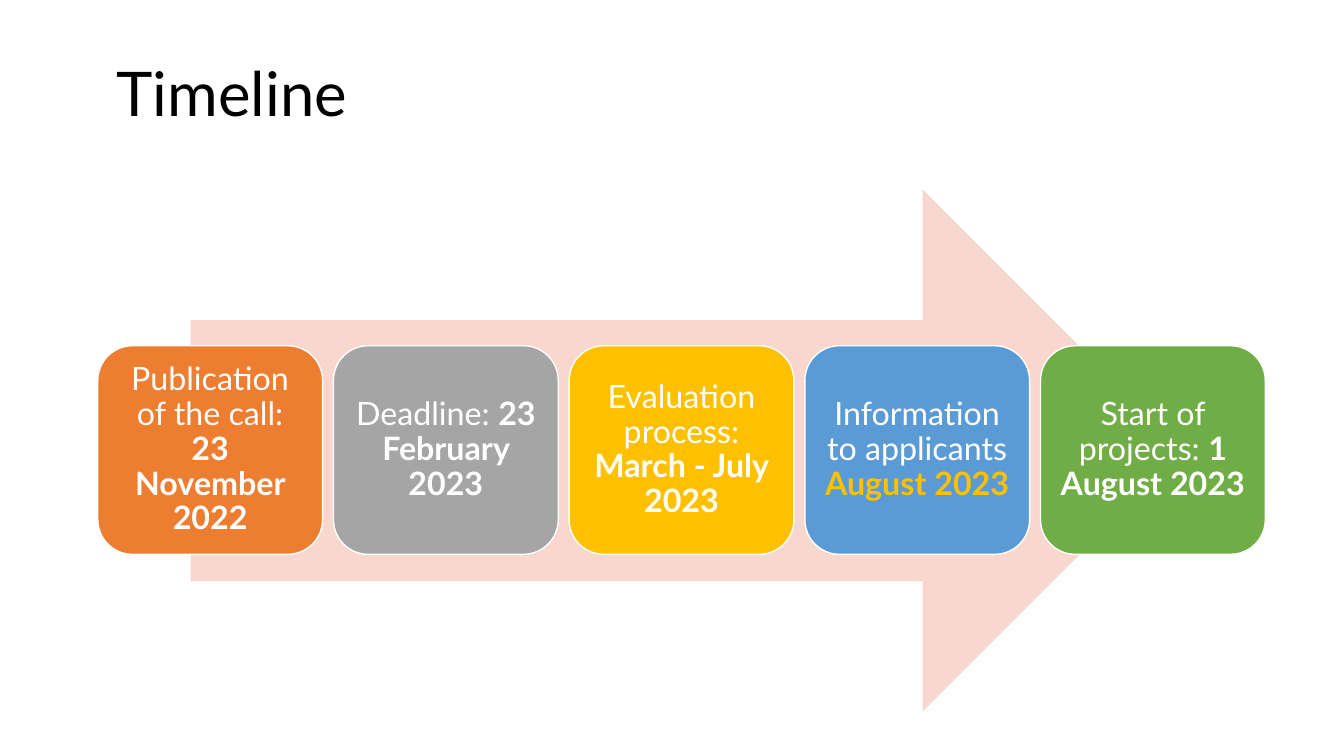
"""Build a timeline slide with five milestone cards on a wide arrow."""
from pptx import Presentation
from pptx.dml.color import RGBColor
from pptx.enum.shapes import MSO_SHAPE
from pptx.enum.text import MSO_ANCHOR, PP_ALIGN
from pptx.util import Inches, Pt

ARROW = MSO_SHAPE.RIGHT_ARROW
ROUNDED = MSO_SHAPE.ROUNDED_RECTANGLE
MIDDLE = MSO_ANCHOR.MIDDLE
LEFT = PP_ALIGN.LEFT
CENTER = PP_ALIGN.CENTER

WHITE = RGBColor(0xFF, 0xFF, 0xFF)
BLACK = RGBColor(0x00, 0x00, 0x00)
PINK = RGBColor(0xF8, 0xD7, 0xCE)
ORANGE = RGBColor(0xED, 0x7D, 0x31)
GRAY = RGBColor(0xA5, 0xA5, 0xA5)
GOLD = RGBColor(0xFF, 0xC0, 0x00)
BLUE = RGBColor(0x5B, 0x9B, 0xD5)
GREEN = RGBColor(0x70, 0xAD, 0x47)

MILESTONES = [
    ("Publication of the call: ", "23 November 2022", ORANGE, WHITE),
    ("Deadline: ", "23 February 2023", GRAY, WHITE),
    ("Evaluation process: ", "March - July 2023", GOLD, WHITE),
    ("Information to applicants ", "August 2023", BLUE, GOLD),
    ("Start of projects: ", "1 August 2023", GREEN, WHITE),
]
FIRST_LEFT, LAST_LEFT = 0.97, 10.32
CARD_TOP, CARD_WIDTH, CARD_HEIGHT = 3.43, 2.23, 2.07


def add_run(paragraph, text, font="Lato", size=23, color=WHITE, bold=False):
    run = paragraph.add_run()
    run.text = text
    run.font.name = font
    run.font.size = Pt(size)
    run.font.color.rgb = color
    run.font.bold = bold


class TimelineSlide:
    def __init__(self, slide, font="Lato"):
        self.shapes = slide.shapes
        self.font = font

    def paragraph(self, holder, align):
        frame = holder.text_frame
        frame.word_wrap = True
        frame.vertical_anchor = MIDDLE
        paragraph = frame.paragraphs[0]
        paragraph.alignment = align
        paragraph.line_spacing = 0.9
        return paragraph

    def title(self, text, left, top, width, height):
        heading = self.shapes.add_textbox(
            Inches(left), Inches(top), Inches(width), Inches(height))
        add_run(self.paragraph(heading, LEFT), text,
                font=self.font, size=44, color=BLACK)

    def block(self, kind, left, top, width, height, fill, outline=None):
        block = self.shapes.add_shape(
            kind, Inches(left), Inches(top), Inches(width), Inches(height))
        block.shadow.inherit = False
        block.fill.solid()
        block.fill.fore_color.rgb = fill
        if outline is None:
            block.line.fill.background()
        else:
            block.line.color.rgb = outline
            block.line.width = Pt(1)
        return block

    def card(self, left, step, date, fill, date_color):
        card = self.block(ROUNDED, left, CARD_TOP, CARD_WIDTH, CARD_HEIGHT,
                          fill, outline=WHITE)
        frame = card.text_frame
        frame.margin_left = frame.margin_right = Inches(0.1)
        frame.margin_top = frame.margin_bottom = Inches(0.1)
        paragraph = self.paragraph(card, CENTER)
        add_run(paragraph, step, font=self.font)
        add_run(paragraph, date, font=self.font, color=date_color, bold=True)


def main():
    deck = Presentation()
    deck.slide_width = Inches(13.33)
    deck.slide_height = Inches(7.5)
    timeline = TimelineSlide(deck.slides.add_slide(deck.slide_layouts[6]))
    timeline.block(ARROW, 1.89, 1.88, 9.85, 5.18, PINK)
    pitch = (LAST_LEFT - FIRST_LEFT) / (len(MILESTONES) - 1)
    for index, milestone in enumerate(MILESTONES):
        timeline.card(FIRST_LEFT + index * pitch, *milestone)
    timeline.title("Timeline", 1.06, 0.53, 11.5, 0.86)
    deck.save("out.pptx")


if __name__ == "__main__":
    main()
